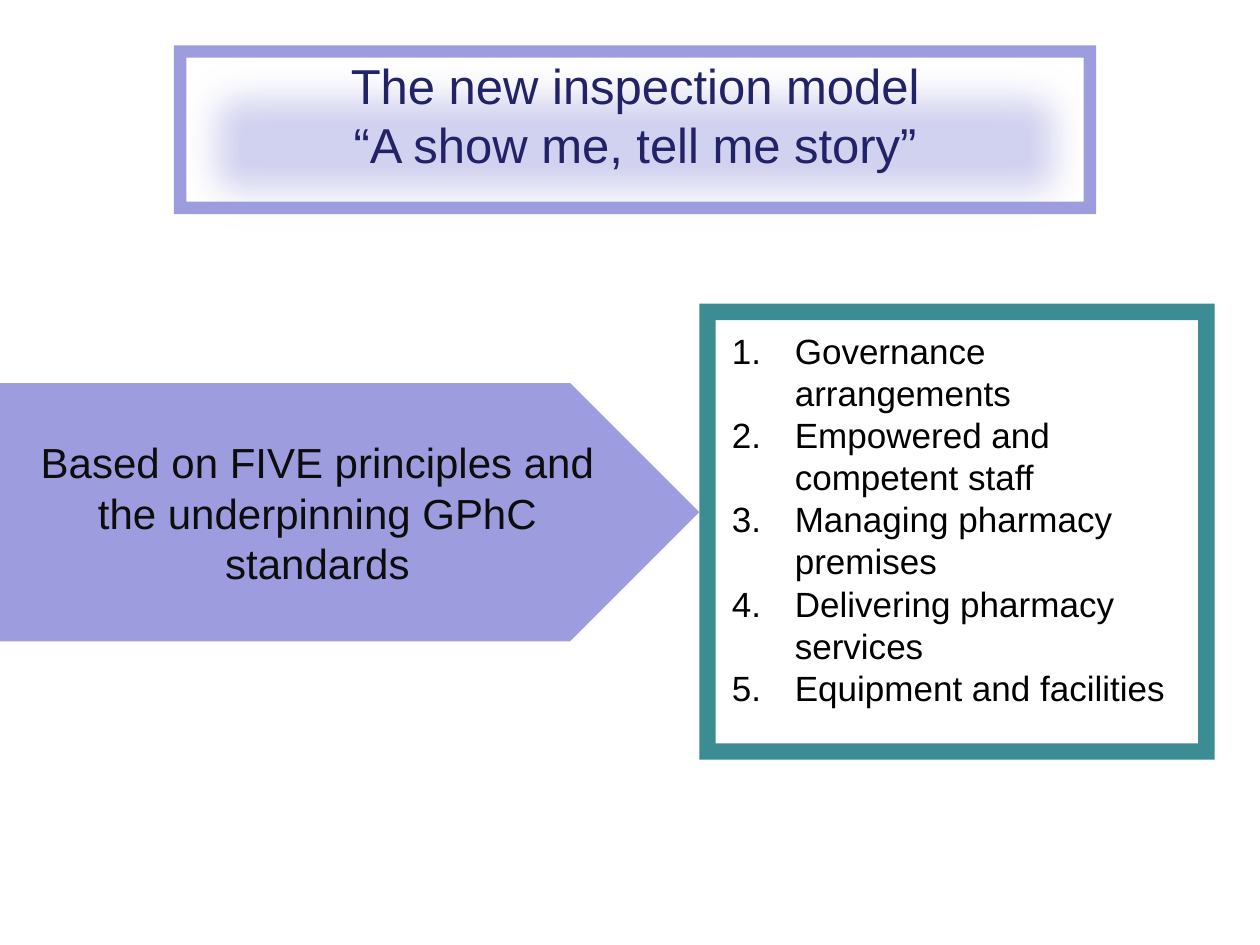
from dataclasses import dataclass

from lxml.etree import SubElement
from pptx import Presentation
from pptx.dml.color import RGBColor
from pptx.enum.shapes import MSO_SHAPE
from pptx.enum.text import MSO_ANCHOR, PP_ALIGN
from pptx.oxml.ns import qn
from pptx.shapes.autoshape import Shape
from pptx.slide import Slide
from pptx.text.text import TextFrame
from pptx.util import Pt

LAVENDER = "9C9CDF"
TEAL = "3C8C93"
PRINCIPLES = [
    "Governance arrangements",
    "Empowered and competent staff",
    "Managing pharmacy premises",
    "Delivering pharmacy services",
    "Equipment and facilities",
]


@dataclass(frozen=True)
class Box:
    left: float
    top: float
    width: float
    height: float

    def lengths(self) -> tuple[Pt, Pt, Pt, Pt]:
        return Pt(self.left), Pt(self.top), Pt(self.width), Pt(self.height)


@dataclass(frozen=True)
class TextStyle:
    size: float
    color: str
    alignment: PP_ALIGN
    numbered: bool = False


def rgb(color: str) -> RGBColor:
    return RGBColor.from_string(color)


def add_filled_shape(slide: Slide, kind: MSO_SHAPE, box: Box, color: str,
                     adjustment: float | None = None) -> Shape:
    shape = slide.shapes.add_shape(kind, *box.lengths())
    shape.shadow.inherit = False
    shape.fill.solid()
    shape.fill.fore_color.rgb = rgb(color)
    shape.line.fill.background()
    if adjustment is not None:
        shape.adjustments[0] = adjustment
    return shape


def soften_edges(shape: Shape, radius: float) -> None:
    effects = shape._element.spPr.find(qn("a:effectLst"))
    SubElement(effects, qn("a:softEdge"), rad=str(Pt(radius)))


def number_paragraph(paragraph, indent: float) -> None:
    """Give the paragraph an automatic number with a hanging indent."""
    properties = paragraph._p.get_or_add_pPr()
    properties.set("marL", str(Pt(indent)))
    properties.set("indent", str(-Pt(indent)))
    SubElement(properties, qn("a:buFont"), typeface="+mj-lt")
    SubElement(properties, qn("a:buAutoNum"), type="arabicPeriod")


def write_paragraphs(frame: TextFrame, lines: list[str], style: TextStyle) -> None:
    frame.word_wrap = True
    for index, line in enumerate(lines):
        paragraph = frame.add_paragraph() if index else frame.paragraphs[0]
        paragraph.alignment = style.alignment
        if style.numbered:
            number_paragraph(paragraph, 36)
        run = paragraph.add_run()
        run.text = line
        run.font.name = "Arial"
        run.font.size = Pt(style.size)
        run.font.color.rgb = rgb(style.color)


def add_title(slide: Slide) -> None:
    panel = add_filled_shape(slide, MSO_SHAPE.RECTANGLE,
                             Box(93.6, 25.9, 538.6, 113), "D1D1F0")
    soften_edges(panel, 25)
    frame = panel.text_frame
    frame.vertical_anchor = MSO_ANCHOR.MIDDLE
    frame.margin_bottom = Pt(38)
    write_paragraphs(frame, ["The new inspection model", "“A show me, tell me story”"],
                     TextStyle(28, "222267", PP_ALIGN.CENTER))
    add_filled_shape(slide, MSO_SHAPE.FRAME, Box(99.4, 25.9, 527, 96.5), LAVENDER, 0.074)


def add_principles(slide: Slide) -> None:
    add_filled_shape(slide, MSO_SHAPE.FRAME, Box(399.6, 173.5, 294.5, 260.6), TEAL, 0.036)
    text_box = slide.shapes.add_textbox(*Box(411.1, 185, 283.7, 225.4).lengths())
    write_paragraphs(text_box.text_frame, PRINCIPLES,
                     TextStyle(20, "000000", PP_ALIGN.LEFT, numbered=True))


def add_arrow(slide: Slide) -> None:
    arrow = add_filled_shape(slide, MSO_SHAPE.PENTAGON,
                             Box(0, 218.9, 399.6, 147.6), LAVENDER)
    arrow.text_frame.vertical_anchor = MSO_ANCHOR.MIDDLE
    write_paragraphs(arrow.text_frame,
                     ["Based on FIVE principles and the underpinning GPhC standards"],
                     TextStyle(24, "0D0D0D", PP_ALIGN.CENTER))


def main() -> None:
    presentation = Presentation()
    presentation.slide_width = Pt(720)
    presentation.slide_height = Pt(540)
    slide = presentation.slides.add_slide(presentation.slide_layouts[6])
    add_title(slide)
    add_principles(slide)
    add_arrow(slide)
    presentation.save("out.pptx")


if __name__ == "__main__":
    main()
